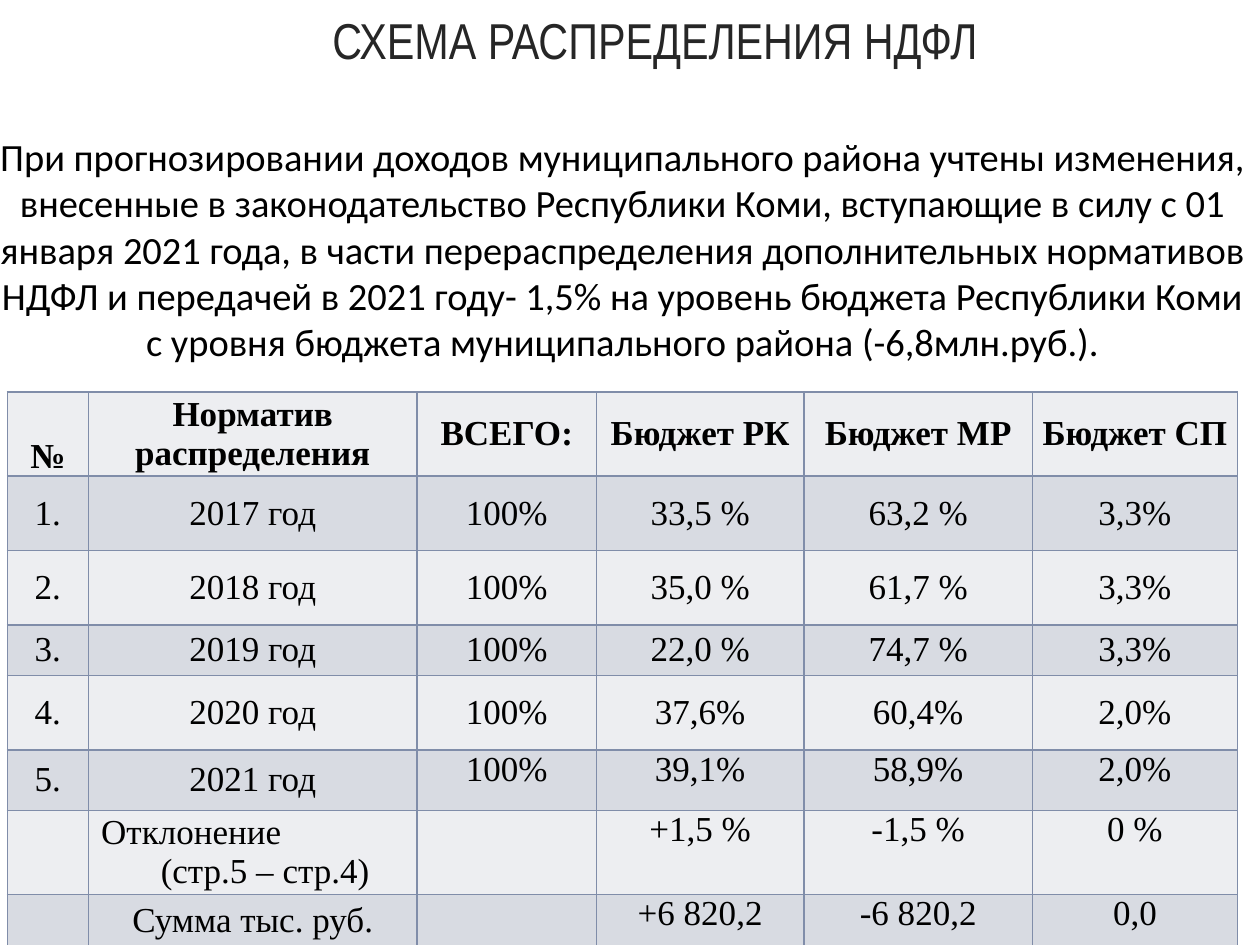
from lxml import etree
from pptx import Presentation
from pptx.dml.color import RGBColor
from pptx.enum import text as t
from pptx.oxml import ns
from pptx.util import Cm, Pt

COLORS = {"title": "262626", "text": "000000", "border": "808DA9",
          "light": "EDEEF1", "dark": "D8DBE2"}
COLUMN_WIDTHS = [1.63, 6.63, 3.61, 4.19, 4.6, 4.14]
ROW_HEIGHTS = [1.68, 1.5, 1.5, 1.02, 1.5, 1.22, 1.22, 1.04]
ROWS = [
    ["№", "Норматив распределения", "ВСЕГО:", "Бюджет РК", "Бюджет МР", "Бюджет СП"],
    ["1.", "2017 год", "100%", "33,5 %", "63,2 %", "3,3%"],
    ["2.", "2018 год", "100%", "35,0 %", "61,7 %", "3,3%"],
    ["3.", "2019 год", "100%", "22,0 %", "74,7 %", "3,3%"],
    ["4.", "2020 год", "100%", "37,6%", "60,4%", "2,0%"],
    ["5.", "2021 год", "100%", "39,1%", "58,9%", "2,0%"],
    ["", "Отклонение\n(стр.5 – стр.4)", "", "+1,5 %", "-1,5 %", "0 %"],
    ["", "Сумма тыс. руб.", "", "+6 820,2", "-6 820,2", "0,0"],
]
FIRST_TOP_ROW = 5  # from here on the figures stand at the top of their cells
DEVIATION_ROW = 6
BODY = ("При прогнозировании доходов муниципального района учтены изменения, "
        "внесенные в законодательство Республики Коми, вступающие в силу с 01 января "
        "2021 года, в части перераспределения дополнительных нормативов НДФЛ и "
        "передачей в 2021 году- 1,5% на уровень бюджета Республики Коми с уровня "
        "бюджета муниципального района (-6,8млн.руб.).")


def format_text(frame, font, size, color, bold=False):
    for para in frame.paragraphs:
        para.alignment = t.PP_ALIGN.CENTER
        for span in para.runs:
            span.font.name = font
            span.font.size = Pt(size)
            span.font.bold = bold
            span.font.color.rgb = RGBColor.from_string(COLORS[color])


def add_text(page, wording, place, font, size, color):
    """Add a centred text box whose text stands on its lower edge."""
    box = page.shapes.add_textbox(*(Cm(length) for length in place))
    frame = box.text_frame
    frame.word_wrap = True
    frame.vertical_anchor = t.MSO_ANCHOR.BOTTOM
    frame.text = wording
    format_text(frame, font, size, color)
    return frame


def add_borders(cell):
    properties = cell._tc.get_or_add_tcPr()
    for index, side in enumerate(("lnL", "lnR", "lnT", "lnB")):
        line = etree.Element(ns.qn(f"a:{side}"), w=str(Pt(1)))
        fill = etree.SubElement(line, ns.qn("a:solidFill"))
        etree.SubElement(fill, ns.qn("a:srgbClr"), val=COLORS["border"])
        properties.insert(index, line)


def cell_anchor(row, column):
    if (row, column) == (0, 0):
        return t.MSO_ANCHOR.BOTTOM
    if row >= FIRST_TOP_ROW and column >= 2:
        return t.MSO_ANCHOR.TOP
    return t.MSO_ANCHOR.MIDDLE


def fill_cell(cell, wording, row, column):
    cell.fill.solid()
    shade = "dark" if row % 2 else "light"
    cell.fill.fore_color.rgb = RGBColor.from_string(COLORS[shade])
    add_borders(cell)
    cell.margin_left = cell.margin_right = Cm(0.18)
    cell.margin_top = cell.margin_bottom = 0
    cell.vertical_anchor = cell_anchor(row, column)
    cell.text_frame.text = wording
    format_text(cell.text_frame, "Times New Roman", 20, "text", bold=row == 0)


def stagger_lines(cell):
    """Set the first line to the left and shift the second to the right."""
    first, second = cell.text_frame.paragraphs
    first.alignment = t.PP_ALIGN.LEFT
    for para, indent in ((first, 0.08), (second, 0.5)):
        para._p.get_or_add_pPr().set("marL", str(Cm(indent)))


def add_rates_table(page):
    frame = page.shapes.add_table(len(ROWS), len(COLUMN_WIDTHS), Cm(0.15), Cm(7.9),
                                  Cm(sum(COLUMN_WIDTHS)), Cm(sum(ROW_HEIGHTS)))
    table = frame.table
    table.first_row = table.horz_banding = False
    for column, width in zip(table.columns, COLUMN_WIDTHS):
        column.width = Cm(width)
    for row, height in zip(table.rows, ROW_HEIGHTS):
        row.height = Cm(height)
    for row, wordings in enumerate(ROWS):
        for column, wording in enumerate(wordings):
            fill_cell(table.cell(row, column), wording, row, column)
    stagger_lines(table.cell(DEVIATION_ROW, 1))


def main():
    deck = Presentation()
    deck.slide_width, deck.slide_height = Cm(25.4), Cm(19.05)
    page = deck.slides.add_slide(deck.slide_layouts[6])
    add_text(page, "СХЕМА РАСПРЕДЕЛЕНИЯ НДФЛ", (1.02, 0, 24.38, 1.52),
             "Arial Narrow", 28.8, "title")
    add_rates_table(page)
    body = add_text(page, BODY, (-0.3, 1.93, 25.7, 5.41), "Calibri", 22, "text")
    body.margin_bottom = 0
    deck.save("out.pptx")


if __name__ == "__main__":
    main()
